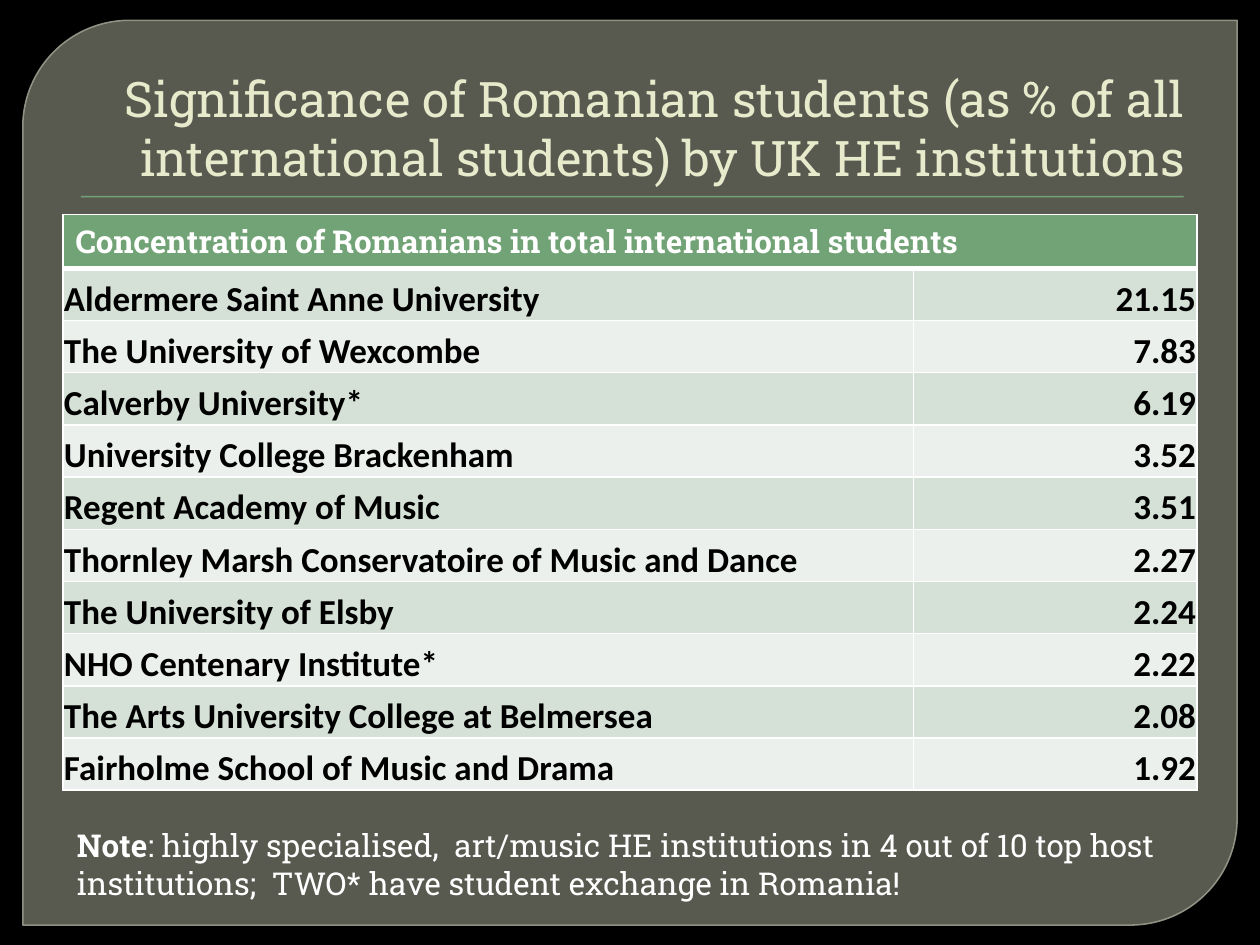
from lxml.etree import SubElement as Sub
from pptx import Presentation
from pptx.dml.color import RGBColor
from pptx.enum.shapes import MSO_SHAPE as Shape
from pptx.enum.text import MSO_ANCHOR as Anchor, PP_ALIGN as Align
from pptx.oxml import parse_xml
from pptx.oxml.ns import nsdecls, qn
from pptx.util import Cm, Pt


def color(value):
    return RGBColor.from_string(value)


def write(para, text, hue, **formats):
    span = para.add_run()
    span.text = text
    span.font.color.rgb = color(hue)
    for key, value in formats.items():
        setattr(span.font, key, value)


SLAB = "Roboto Slab"
WHITE, GREEN = "FFFFFF", "72A376"
BANDS = ["D5E0D6", "EBF0EC"]
INSTITUTIONS = [
    ("Aldermere Saint Anne University", "21.15"),
    ("The University of Wexcombe", "7.83"),
    ("Calverby University*", "6.19"),
    ("University College Brackenham", "3.52"),
    ("Regent Academy of Music", "3.51"),
    ("Thornley Marsh Conservatoire of Music and Dance", "2.27"),
    ("The University of Elsby", "2.24"),
    ("NHO Centenary Institute*", "2.22"),
    ("The Arts University College at Belmersea", "2.08"),
    ("Fairholme School of Music and Drama", "1.92"),
]

deck = Presentation()
deck.slide_width, deck.slide_height = Cm(25.4), Cm(19.05)
page = deck.slides.add_slide(deck.slide_layouts[6])
page.background.fill.solid()
page.background.fill.fore_color.rgb = color("000000")

panel = page.shapes.add_shape(
    Shape.ROUND_2_DIAG_RECTANGLE, Cm(0.46), Cm(0.41), Cm(24.48), Cm(18.24))
panel.adjustments[0] = 0.118
panel.adjustments[1] = 0
panel.line.width = Pt(0.87)
panel.line.fill.solid()
panel.line.fill.fore_color.rgb = color("9DA090")

rule = page.shapes.add_shape(
    Shape.RECTANGLE, Cm(1.63), Cm(3.95), Cm(22.23), Cm(0.03))
rule.line.fill.background()

for box, hue in [(panel, "888B7B"), (rule, GREEN)]:
    box.shadow.inherit = False
    box.fill.solid()
    box.fill.fore_color.rgb = color(hue)

fills = panel.element.spPr.iter(qn("a:srgbClr"))
for tint, percent in zip(list(fills), [65, 88]):
    Sub(tint, qn("a:alpha"), val=str(percent * 1000))

title = page.shapes.add_textbox(Cm(1.27), Cm(0.7), Cm(22.86), Cm(3.18))
title.text_frame.word_wrap = True
title.text_frame.vertical_anchor = Anchor.BOTTOM
para = title.text_frame.paragraphs[0]
para.alignment = Align.RIGHT
write(para, "Significance of Romanian students (as % of all international students) "
      "by UK HE institutions", "E7EACB", size=Pt(28), name=SLAB)

row_count = len(INSTITUTIONS) + 1
table = page.shapes.add_table(
    row_count, 2, Cm(1.27), Cm(4.32), Cm(22.86), Cm(11.58)).table
table.columns[0].width, table.columns[1].width = Cm(17.15), Cm(5.71)
table.rows[0].height = Cm(1.09)

header = table.cell(0, 0)
header.merge(table.cell(0, 1))
write(header.text_frame.paragraphs[0],
      "Concentration of Romanians in total international students",
      WHITE, size=Pt(18), name=SLAB, bold=True)

body = {"vertical_anchor": Anchor.BOTTOM, "margin_left": Cm(0.02),
        "margin_right": Cm(0.02), "margin_top": Cm(0.02), "margin_bottom": 0}
for row, values in enumerate(INSTITUTIONS, 1):
    for column, value in enumerate(values):
        cell = table.cell(row, column)
        for key, setting in body.items():
            setattr(cell, key, setting)
        para = cell.text_frame.paragraphs[0]
        para.alignment = [Align.LEFT, Align.RIGHT][column]
        write(para, value, "000000", size=Pt(20), name="Calibri", bold=True)

for row in range(row_count):
    for column in range(2):
        cell = table.cell(row, column)
        cell.fill.solid()
        cell.fill.fore_color.rgb = color(BANDS[(row - 1) % 2] if row else GREEN)
        widths = {"L": 1, "R": 1, "T": 3 if row == 1 else 1, "B": 1 if row else 3}
        for place, (side, width) in enumerate(widths.items()):
            cell._tc.get_or_add_tcPr().insert(place, parse_xml(
                f'<a:ln{side} {nsdecls("a")} w="{Pt(width)}"><a:solidFill>'
                f'<a:srgbClr val="{WHITE}"/></a:solidFill></a:ln{side}>'))

note = page.shapes.add_textbox(Cm(1.3), Cm(16.53), Cm(22.81), Cm(1.8))
note.text_frame.word_wrap = True
para = note.text_frame.paragraphs[0]
write(para, "Note", WHITE, size=Pt(18), name=SLAB, bold=True)
write(para, ": highly specialised,  art/music HE institutions in 4 out of 10 top host "
      "institutions;  TWO* have student exchange in Romania!",
      WHITE, size=Pt(18), name=SLAB, bold=False)

deck.save("out.pptx")
